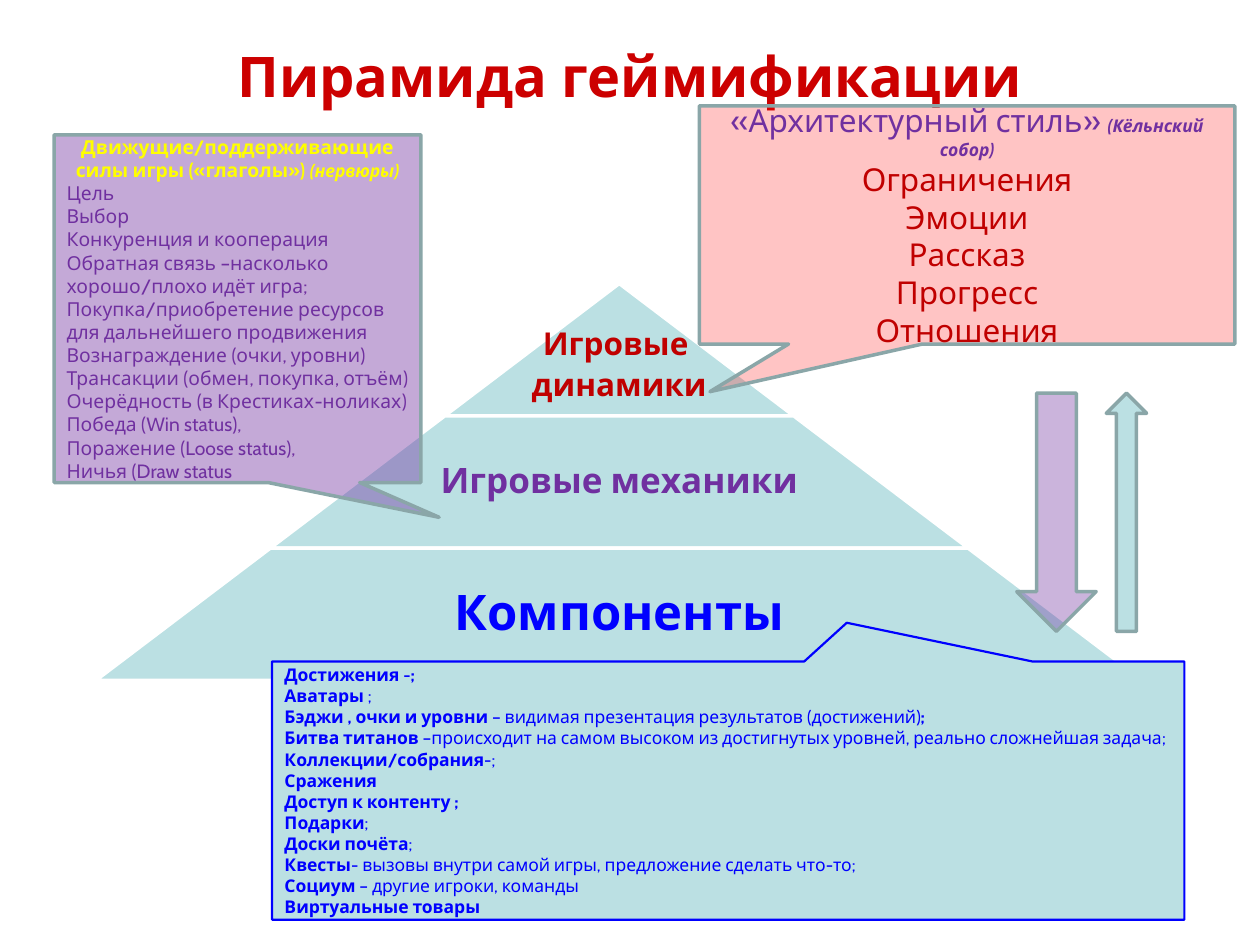
import pptx
import pptx.util
import pptx.dml.color
import pptx.enum.shapes
import pptx.enum.text
import lxml.etree

WIDE, HIGH = 10, 7.5
RED, PLUM, BLUE, PALE, GREY = "C00000", "7030A0", "0000FF", "BBE0E3", "8AA6A8"
KIND = pptx.enum.shapes.MSO_SHAPE
ALIGN = pptx.enum.text.PP_ALIGN
MID = pptx.enum.text.MSO_ANCHOR.MIDDLE

STYLE = [
    [("«Архитектурный стиль» ", {"size": 18, "color": PLUM}),
     ("(Кёльнский собор)", {"size": 10, "color": PLUM, "bold": True, "italic": True})],
    *[[(word, {"size": 18, "color": RED})] for word in
      ("Ограничения", "Эмоции", "Рассказ", "Прогресс", "Отношения")],
]
HEAD = [
    ("Движущие/поддерживающие силы игры («глаголы») ",
     {"size": 11, "color": "FFFF00", "bold": True}),
    ("(нервюры)", {"size": 10, "color": "FFFF00", "bold": True, "italic": True}),
]
VERBS = [
    "Цель", "Выбор", "Конкуренция и кооперация",
    "Обратная связь –насколько хорошо/плохо идёт игра;",
    "Покупка/приобретение ресурсов для дальнейшего продвижения",
    "Вознаграждение (очки, уровни)", "Трансакции (обмен, покупка, отъём)",
    "Очерёдность (в Крестиках-ноликах)", "Победа (Win status),",
    "Поражение (Loose status),", "Ничья (Draw status",
]
PARTS = [
    ["Достижения -;"],
    ["Аватары ", ";"],
    ["Бэджи , очки и уровни", " – видимая презентация результатов (достижений)", ";"],
    ["Битва титанов ",
     "–происходит на самом высоком из достигнутых уровней, реально сложнейшая задача;"],
    ["Коллекции/собрания", "-;"],
    ["Сражения"],
    ["Доступ к контенту ;"],
    ["Подарки", ";"],
    ["Доски почёта", ";"],
    ["Квесты", "- вызовы внутри самой игры, предложение сделать что-то;"],
    ["Социум", " – другие игроки, команды"],
    ["Виртуальные товары"],
]
TIERS = [
    (["Игровые ", "динамики"], 18, RED, 0.29),
    (["Игровые механики"], 20, PLUM, 0.03),
    (["Компоненты"], 28, BLUE, 0.04),
]


def tint(code):
    return pptx.dml.color.RGBColor.from_string(code)


def place(x, y, w, h):
    return [pptx.util.Inches(part * side / 100)
            for part, side in zip((x, y, w, h), (WIDE, HIGH) * 2)]


def apply(item, looks):
    for key, value in looks.items():
        setattr(item, key, value)


def inset(frame, side, top):
    edge, roof = pptx.util.Inches(side), pptx.util.Inches(top)
    apply(frame, {"margin_left": edge, "margin_right": edge,
                  "margin_top": roof, "margin_bottom": edge})


def write(frame, rows, align, font="Cabin", **gaps):
    apply(frame, {"word_wrap": True, "vertical_anchor": MID,
                  "auto_size": pptx.enum.text.MSO_AUTO_SIZE.NONE})
    for i, row in enumerate(rows):
        para = frame.add_paragraph() if i else frame.paragraphs[0]
        apply(para, {"alignment": align, **gaps})
        for text, looks in row:
            run = para.add_run()
            run.text = text
            apply(run.font, {"name": font, "bold": looks.get("bold", False),
                             "italic": looks.get("italic", False),
                             "size": pptx.util.Pt(looks["size"])})
            run.font.color.rgb = tint(looks["color"])


def draw(slide, kind, box, fill, line, width=2, bends=(), clear=None):
    shape = slide.shapes.add_shape(kind, *place(*box))
    shape.shadow.inherit = False
    shape.fill.solid()
    shape.fill.fore_color.rgb = tint(fill)
    shape.line.color.rgb = tint(line)
    shape.line.width = pptx.util.Pt(width)
    for i, bend in enumerate(bends):
        shape.adjustments[i] = bend
    if clear:
        space = pptx.oxml.ns.qn
        tone = shape.fill._xPr.find(space("a:solidFill")).find(space("a:srgbClr"))
        lxml.etree.SubElement(tone, space("a:alpha"), val=str(clear * 1000))
    return shape


def title(slide):
    shape = slide.shapes.title
    apply(shape, dict(zip(("left", "top", "width", "height"),
                          place(4.3, 3.73, 91.4, 8.4))))
    inset(shape.text_frame, 0, 0)
    looks = {"size": 32, "color": "CC0000", "bold": True}
    write(shape.text_frame, [[("Пирамида геймификации", looks)]], ALIGN.CENTER, "Karla")


def tiers(slide):
    step, axis, high = 27.7, 49.15, 14
    for i, (lines, size, color, roof) in enumerate(TIERS):
        wide, top = step * (i + 1), 30 + i * high
        box = (axis - wide / 2, top, wide, high)
        draw(slide, KIND.TRAPEZOID, box, PALE, "FFFFFF", bends=[1.32])
        label = slide.shapes.add_textbox(*place(*box)).text_frame
        inset(label, 0.03, roof)
        looks = {"size": size, "color": color, "bold": True}
        write(label, [[(line, looks)] for line in lines], ALIGN.CENTER,
              line_spacing=0.9, space_after=pptx.util.Pt(4))


def notes(slide):
    kind = KIND.RECTANGULAR_CALLOUT
    style = draw(slide, kind, (55.5, 11.2, 42.5, 25.2), "FF0000", GREY,
                 bends=(-0.48, 0.7), clear=23)
    write(style.text_frame, STYLE, ALIGN.CENTER)

    verbs = draw(slide, kind, (4.3, 14.27, 29.1, 36.8), PLUM, GREY,
                 bends=(0.55, 0.6), clear=41)
    looks = {"size": 11, "color": PLUM}
    write(verbs.text_frame, [HEAD] + [[(verb, looks)] for verb in VERBS], ALIGN.LEFT)
    verbs.text_frame.paragraphs[0].alignment = ALIGN.CENTER

    parts = draw(slide, kind, (21.6, 70, 72.4, 27.33), PALE, BLUE, 1.25,
                 bends=(0.13, -0.65))
    rows = [[(text, {"size": 10, "color": BLUE, "bold": i % 2 == 0})
             for i, text in enumerate(row)] for row in PARTS]
    write(parts.text_frame, rows, ALIGN.LEFT)


def arrows(slide):
    draw(slide, KIND.DOWN_ARROW, (80.7, 41.6, 6.3, 25.2), PLUM, GREY, clear=36)
    draw(slide, KIND.UP_ARROW, (87.8, 41.6, 3.2, 25.2), PALE, GREY)


def main():
    deck = pptx.Presentation()
    deck.slide_width = pptx.util.Inches(WIDE)
    deck.slide_height = pptx.util.Inches(HIGH)
    slide = deck.slides.add_slide(deck.slide_layouts[5])
    title(slide)
    tiers(slide)
    notes(slide)
    arrows(slide)
    deck.save("out.pptx")


if __name__ == "__main__":
    main()
